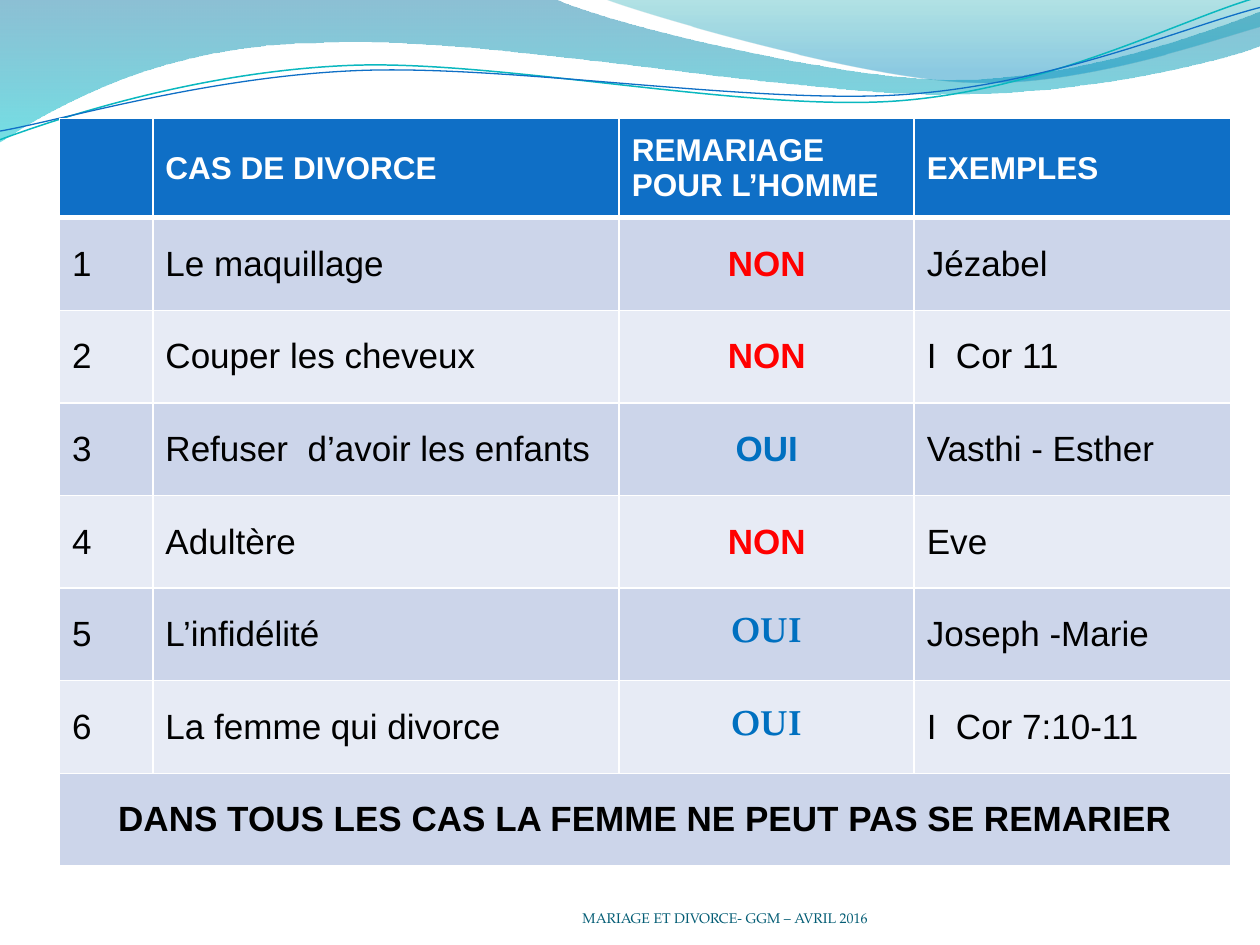
from dataclasses import dataclass
from typing import Optional

import pptx
import pptx.dml.color
import pptx.enum.text
import pptx.oxml
import pptx.oxml.ns
import pptx.util

Pt = pptx.util.Pt
RGB = pptx.dml.color.RGBColor.from_string
qn = pptx.oxml.ns.qn
NS = pptx.oxml.ns.nsdecls("a")
ALIGN = pptx.enum.text.PP_ALIGN
ANCHOR = pptx.enum.text.MSO_ANCHOR


@dataclass(frozen=True)
class Theme:
    sans: str = "Arial"
    serif: str = "TeX Gyre Pagella"
    head_size: float = 18
    body_size: float = 20
    foot_size: float = 8
    white: str = "FFFFFF"
    black: str = "000000"
    blue: str = "0F6FC6"
    teal: str = "0AB8BF"
    foot: str = "045D75"
    no: str = "FF0000"
    yes: str = "0070C0"
    bands: tuple = ("CCD5EA", "E7EBF5")


T = Theme()


@dataclass(frozen=True)
class Stop:
    position: float
    color: str
    opacity: int


@dataclass(frozen=True)
class Wave:
    """Segments of one point are straight, segments of three are Bézier curves."""
    start: tuple
    segments: list
    stops: tuple = ()
    line: Optional[str] = None
    width: float = 0
    rotation: float = 0


@dataclass(frozen=True)
class Case:
    name: str
    remarry: str
    example: str
    font: str = T.sans


WAVES = [
    Wave((0, -0.7), [
        [(316.8, -0.7)],
        [(342.7, 12.2), (478.1, 45.4), (545.8, 45.4)],
        [(614.2, 45.4), (689.8, 18.7), (720, 6.5)],
        [(720.7, 25.9)],
        [(707.8, 31.7), (626.4, 54.7), (537.1, 54)],
        [(447.8, 54), (275, 20.2), (185, 24.5)],
        [(92.9, 25.2), (33.1, 59.8), (-0.7, 81.4)],
        [(0, -0.7)],
    ], stops=(Stop(0, "0074A1", 45), Stop(1, "00C6CF", 55))),
    Wave((344.9, -0.7), [
        [(366.5, 7.9), (491, 44.6), (553.7, 46.8)],
        [(616.3, 49.7), (691.9, 23), (720, 15.1)],
        [(720, 0)],
        [(344.9, -0.7)],
    ], stops=(Stop(0, "00A1A9", 30), Stop(0.8, "008BBF", 45))),
    Wave((-1.4, 62.9), [
        [(33.8, 51.7), (114.1, 29.4), (199.8, 29.9)],
        [(284.9, 30.3), (425.8, 67.3), (512.4, 64.9)],
        [(599, 62.4), (676.4, 25.7), (720.2, 15.5)],
    ], line=T.teal, width=0.85, rotation=357.3),
    Wave((-1.1, 57.9), [
        [(32.9, 53.7), (118.3, 32.5), (204.1, 33)],
        [(290.6, 33.4), (428.9, 63.1), (515.5, 61.4)],
        [(601.3, 59.6), (678.5, 30.1), (721.4, 21.3)],
    ], line=T.blue, width=0.75, rotation=357.3),
]

HEADERS = ["", "CAS DE DIVORCE", "REMARIAGE POUR L’HOMME", "EXEMPLES"]
CASES = [
    Case("Le maquillage", "NON", "Jézabel"),
    Case("Couper les cheveux", "NON", "I  Cor 11"),
    Case("Refuser  d’avoir les enfants", "OUI", "Vasthi - Esther"),
    Case("Adultère", "NON", "Eve"),
    Case("L’infidélité", "OUI", "Joseph -Marie", T.serif),
    Case("La femme qui divorce", "OUI", "I  Cor 7:10-11", T.serif),
]
CONCLUSION = "DANS TOUS LES CAS LA FEMME NE PEUT PAS SE REMARIER"
COLUMN_WIDTHS = [53.4, 266.5, 168.6, 180.7]
HEAD_HEIGHT, ROW_HEIGHT = 56.7, 52.94


def draw_wave(s, wave: Wave) -> None:
    points = [wave.start] + [point for seg in wave.segments for point in seg]
    points = [(Pt(x), Pt(y)) for x, y in points]
    builder = s.shapes.build_freeform(*points[0])
    builder.add_line_segments(points[1:], close=bool(wave.stops))
    sp = builder.convert_to_shape()
    sp.shadow.inherit = False
    sp.rotation = wave.rotation

    # Join the three points of each curve into one cubic segment
    vertices = iter(list(sp._element.spPr.iter(qn("a:lnTo"))))
    for seg in wave.segments:
        steps = [next(vertices) for _ in seg]
        if len(steps) == 3:
            curve = pptx.oxml.parse_xml(f"<a:cubicBezTo {NS}/>")
            steps[0].addprevious(curve)
            for step in steps:
                curve.append(step[0])
                step.getparent().remove(step)

    if wave.line:
        sp.fill.background()
        sp.line.color.rgb = RGB(wave.line)
        sp.line.width = Pt(wave.width)
        return
    sp.line.fill.background()
    sp.fill.gradient()
    sp.fill.gradient_angle = 270
    for gs, stop in zip(sp.fill.gradient_stops, wave.stops):
        gs.position = stop.position
        gs.color.rgb = RGB(stop.color)
    # Opacity of each gradient stop
    for clr, stop in zip(list(sp._element.spPr.iter(qn("a:srgbClr"))), wave.stops):
        clr.append(pptx.oxml.parse_xml(f'<a:alpha {NS} val="{stop.opacity * 1000}"/>'))


def add_run(p, text: str, size: float, color: str, font: str = T.sans, bold: bool = False) -> None:
    r = p.add_run()
    r.text = text
    r.font.name, r.font.size, r.font.bold = font, Pt(size), bold
    r.font.color.rgb = RGB(color)


def set_cell(cell, fill: str, text: str, size: float = T.body_size, color: str = T.black,
             font: str = T.sans, bold: bool = False, center: bool = False,
             bottom: float = 1, top: float = 1) -> None:
    # Borders come before the fill in the cell properties
    tc_pr = cell._tc.get_or_add_tcPr()
    for side, width in (("L", 1), ("R", 1), ("T", top), ("B", bottom)):
        tc_pr.append(pptx.oxml.parse_xml(
            f'<a:ln{side} {NS} w="{Pt(width)}"><a:solidFill>'
            f'<a:srgbClr val="{T.white}"/></a:solidFill></a:ln{side}>'))
    cell.fill.solid()
    cell.fill.fore_color.rgb = RGB(fill)
    cell.vertical_anchor = ANCHOR.MIDDLE
    p = cell.text_frame.paragraphs[0]
    p.alignment = ALIGN.CENTER if center else ALIGN.LEFT
    if text:
        add_run(p, text, size, color, font, bold)


def draw_table(s) -> None:
    rows = len(CASES) + 2
    table = s.shapes.add_table(rows, len(HEADERS), Pt(34), Pt(67.7), Pt(sum(COLUMN_WIDTHS)),
                               Pt(HEAD_HEIGHT + ROW_HEIGHT * (rows - 1))).table
    for column, width in zip(table.columns, COLUMN_WIDTHS):
        column.width = Pt(width)
    for i, row in enumerate(table.rows):
        row.height = Pt(ROW_HEIGHT if i else HEAD_HEIGHT)

    for col, text in enumerate(HEADERS):
        set_cell(table.cell(0, col), T.blue, text, T.head_size, T.white, bold=True, bottom=3)
    for i, case in enumerate(CASES, 1):
        band = T.bands[(i - 1) % 2]
        top = 3 if i == 1 else 1
        for col, text in ((0, str(i)), (1, case.name), (3, case.example)):
            set_cell(table.cell(i, col), band, text, top=top)
        set_cell(table.cell(i, 2), band, case.remarry, font=case.font, bold=True, center=True,
                 color=T.yes if case.remarry == "OUI" else T.no, top=top)

    # Conclusion across the whole width
    last = table.cell(rows - 1, 0)
    last.merge(table.cell(rows - 1, len(HEADERS) - 1))
    set_cell(last, T.bands[0], CONCLUSION, bold=True, center=True)


def draw_footer(s) -> None:
    tf = s.shapes.add_textbox(Pt(210), Pt(500.4), Pt(409), Pt(28.8)).text_frame
    tf.word_wrap = True
    tf.margin_left = tf.margin_right = tf.margin_top = tf.margin_bottom = 0
    tf.vertical_anchor = ANCHOR.BOTTOM
    p = tf.paragraphs[0]
    p.alignment = ALIGN.CENTER
    add_run(p, "MARIAGE ET DIVORCE- GGM – AVRIL 2016", T.foot_size, T.foot, T.serif)


def main() -> None:
    prs = pptx.Presentation()
    prs.slide_width, prs.slide_height = Pt(720), Pt(540)
    s = prs.slides.add_slide(prs.slide_layouts[6])
    for wave in WAVES:
        draw_wave(s, wave)
    draw_footer(s)
    draw_table(s)
    prs.save("out.pptx")


if __name__ == "__main__":
    main()
